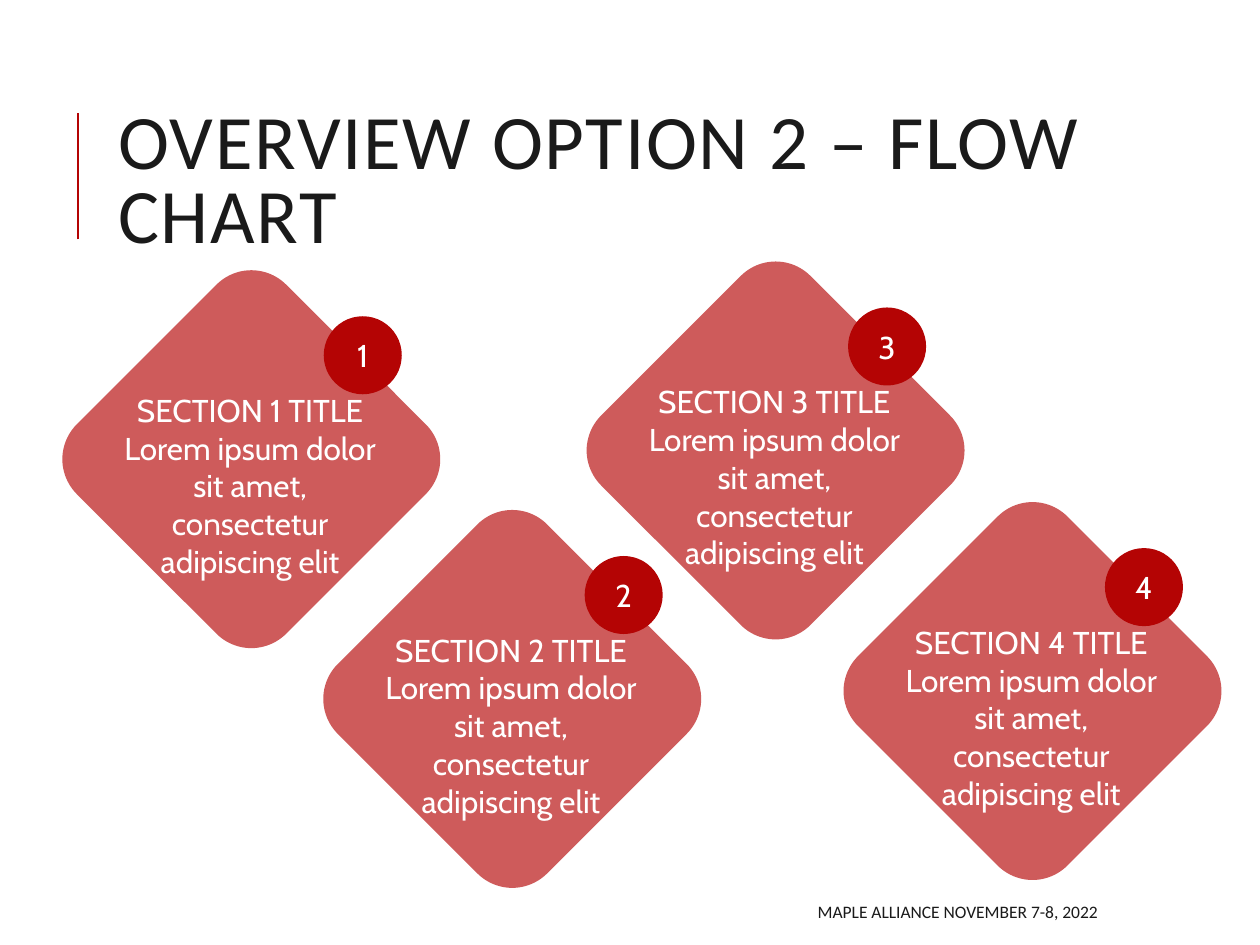
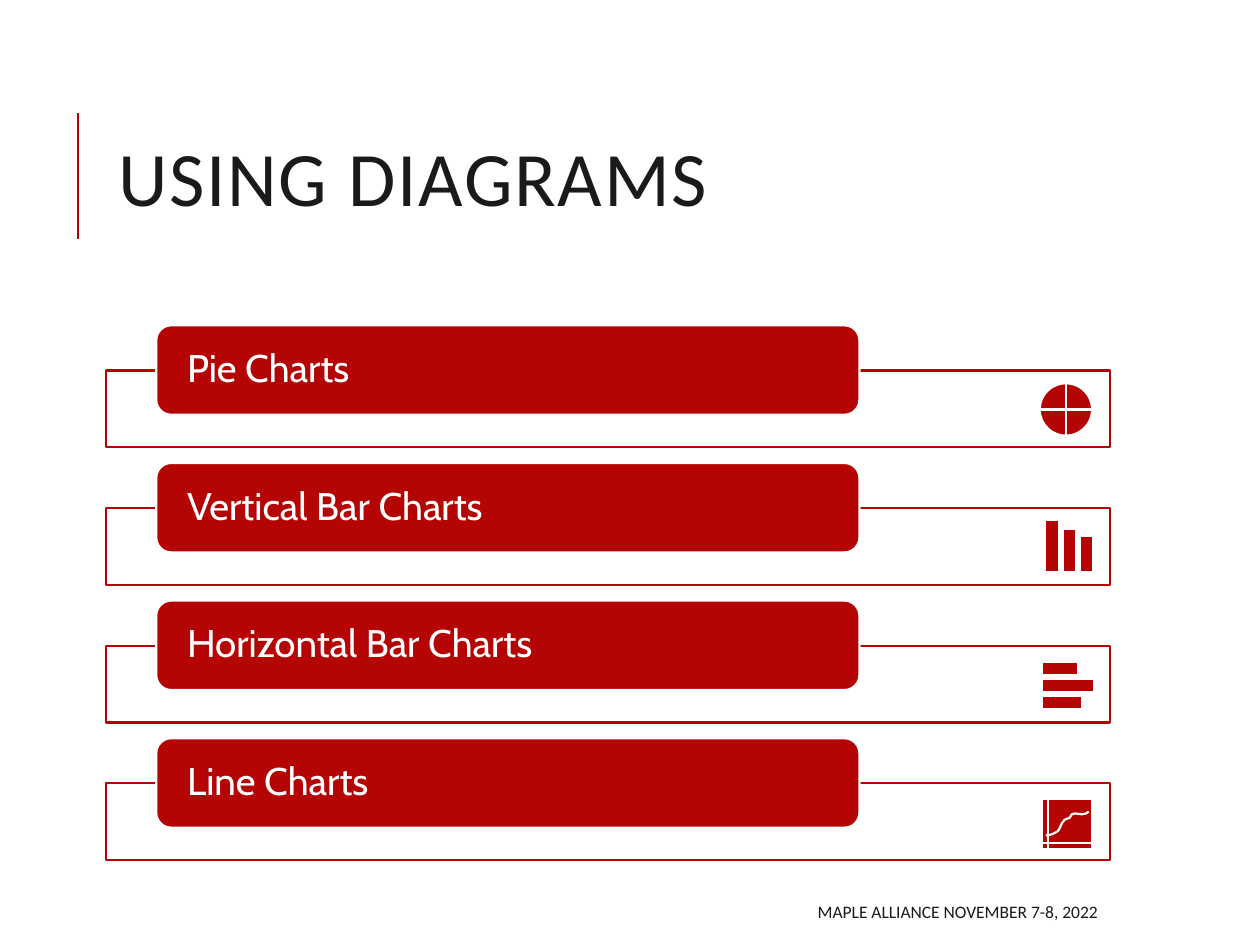
from lxml import etree
from pptx import Presentation
from pptx.dml.color import RGBColor
from pptx.enum.shapes import MSO_CONNECTOR, MSO_SHAPE
from pptx.enum.text import MSO_ANCHOR, MSO_AUTO_SIZE, PP_ALIGN
from pptx.oxml.ns import qn
from pptx.util import Pt

# Shared style
RED = RGBColor(0xB4, 0x04, 0x04)
WHITE = RGBColor(0xFF, 0xFF, 0xFF)
INK = RGBColor(0x1A, 0x1A, 0x1A)
HEAD_FONT, BODY_FONT = "Calibri", "Cabin"
LEFT, CENTER, RIGHT = PP_ALIGN.LEFT, PP_ALIGN.CENTER, PP_ALIGN.RIGHT
TOP, MIDDLE = MSO_ANCHOR.TOP, MSO_ANCHOR.MIDDLE
GROW = MSO_AUTO_SIZE.SHAPE_TO_FIT_TEXT
STRAIGHT = MSO_CONNECTOR.STRAIGHT
RECT, ROUNDED = MSO_SHAPE.RECTANGLE, MSO_SHAPE.ROUNDED_RECTANGLE
CIRCLE = MSO_SHAPE.OVAL
PIE_ICON = MSO_SHAPE.FLOWCHART_OR
AXES_ICON = MSO_SHAPE.FLOWCHART_INTERNAL_STORAGE
FOOTER = "MAPLE ALLIANCE NOVEMBER 7-8, 2022"

# Flow chart content
SECTION_TEXT = "Lorem ipsum dolor sit amet, consectetur adipiscing elit"
SECTION_PLACES = [(59, 177.8), (208.1, 314.8), (358.6, 172.8), (505.4, 310.3)]
DIAMOND_SIZE, BADGE_SIZE = 169.2, 44.6

# Chart list content
CHART_KINDS = ["Pie Charts", "Vertical Bar Charts",
               "Horizontal Bar Charts", "Line Charts"]
ROW_TOP, ROW_PITCH = 185.9, 78.65
BAR_THICKNESS = 7.9
CURVE_START = (597.6, 477.4)
CURVE_PIECES = [
    ((599.8, 477.4), (601.9, 476.6), (604.1, 475.2)),
    ((605.5, 474.5), (606.2, 470.9), (607.7, 469.4)),
    ((608.4, 468), (609.8, 468), (611.3, 467.3)),
    ((612, 466.6), (612, 465.1), (613.4, 465.1)),
    ((614.9, 464.4), (617.8, 465.8), (619.2, 465.1)),
    ((620.6, 465.1), (621.4, 464.4), (622.1, 463.7)),
]


def write(box, *lines, size=18, font=BODY_FONT, color=WHITE, align=LEFT,
          anchor=MIDDLE, line_spacing=None, tracking=None, insets=(7.2, 3.6)):
    """Fill a shape or text box with one paragraph for each line."""
    frame = box.text_frame
    frame.word_wrap = True
    frame.vertical_anchor = anchor
    frame.margin_left = frame.margin_right = Pt(insets[0])
    frame.margin_top = frame.margin_bottom = Pt(insets[1])
    for index, line in enumerate(lines):
        para = frame.add_paragraph() if index else frame.paragraphs[0]
        para.alignment = align
        if line_spacing:
            para.line_spacing = line_spacing
        span = para.add_run()
        span.text = line
        span.font.size = Pt(size)
        span.font.name = font
        span.font.color.rgb = color
        if tracking:
            span.font._element.set("spc", str(tracking * 100))


def add_text(page, place, *lines, **style):
    box = page.shapes.add_textbox(*map(Pt, place))
    write(box, *lines, **style)
    return box


def add_block(page, kind, place, fill=RED, line=None, width=1.25, opacity=None):
    """Add a flat preset shape; opacity is a percentage."""
    shape = page.shapes.add_shape(kind, *map(Pt, place))
    shape.shadow.inherit = False
    shape.fill.solid()
    shape.fill.fore_color.rgb = fill
    if opacity:
        color = shape._element.spPr.find(qn("a:solidFill"))[0]
        etree.SubElement(color, qn("a:alpha"), val=str(opacity * 1000))
    if line is None:
        shape.line.fill.background()
    else:
        shape.line.color.rgb = line
        shape.line.width = Pt(width)
    return shape


def add_icon_part(page, kind, place):
    return add_block(page, kind, place, line=WHITE, width=1.5)


def add_page(deck, title):
    """Add a page with the red rule, title and footer."""
    page = deck.slides.add_slide(deck.slide_layouts[6])
    rule = page.shapes.add_connector(
        STRAIGHT, Pt(44.6), Pt(136.8), Pt(44.6), Pt(64.8))
    rule.line.color.rgb = RED
    rule.line.width = Pt(1.5)
    etree.SubElement(rule._element.spPr, qn("a:effectLst"))
    add_text(page, (60.5, 46.1, 573.8, 118.1), title, size=44,
             font=HEAD_FONT, color=INK, line_spacing=0.8, tracking=1)
    add_text(page, (285.8, 509.8, 348.5, 21.6), FOOTER, size=10,
             font=HEAD_FONT, color=INK, align=RIGHT)
    return page


def add_section(page, number, left, top):
    """Add a diamond with its numbered badge and text."""
    diamond = add_block(page, ROUNDED, (left, top, DIAMOND_SIZE, DIAMOND_SIZE),
                        opacity=65)
    diamond.rotation = 45
    badge = add_block(page, CIRCLE,
                      (left + 126, top + 2.9, BADGE_SIZE, BADGE_SIZE))
    write(badge, str(number), align=CENTER)
    box = add_text(page, (left + 2.9, top + 42, 162, 94.3),
                   f"SECTION {number} TITLE", SECTION_TEXT,
                   align=CENTER, anchor=TOP)
    box.text_frame.auto_size = GROW


def add_chart_row(page, label, top):
    add_block(page, RECT, (60.5, top + 25.8, 573.8, 43.9), fill=WHITE,
              line=RED, opacity=90)
    bar = add_block(page, ROUNDED, (89.3, top, 401.8, 51.1), line=WHITE)
    write(bar, label, size=22, line_spacing=0.9, insets=(15.1, 0))


def bezier_points(start, pieces, steps=8):
    """Return points along joined cubic curves."""
    points = []
    for first, second, end in pieces:
        for step in range(1, steps + 1):
            t = step / steps
            u = 1 - t
            points.append(tuple(
                u**3 * a + 3 * u * u * t * b + 3 * u * t * t * c + t**3 * d
                for a, b, c, d in zip(start, first, second, end)))
        start = end
    return points


def add_curve(page):
    builder = page.shapes.build_freeform(*map(Pt, CURVE_START))
    builder.add_line_segments(
        [(Pt(x), Pt(y)) for x, y in bezier_points(CURVE_START, CURVE_PIECES)],
        close=False)
    curve = builder.convert_to_shape()
    curve.shadow.inherit = False
    curve.fill.background()
    curve.line.color.rgb = WHITE
    curve.line.width = Pt(1.25)


def add_icons(page):
    # Pie
    add_icon_part(page, PIE_ICON, (594, 218.9, 30.2, 30.2))
    # Vertical bars, standing on one baseline
    for index, length in enumerate([30.2, 25.2, 20.9]):
        add_icon_part(page, RECT, (597.2 + 9.9 * index, 327.2 - length,
                                   BAR_THICKNESS, length))
    # Horizontal bars
    for index, length in enumerate([20.9, 30.2, 23]):
        add_icon_part(page, RECT, (595.4, 378 + 9.7 * index,
                                   length, BAR_THICKNESS))
    # Line chart
    axes = add_icon_part(page, AXES_ICON, (595.4, 456.5, 28.8, 28.8))
    axes.rotation = 270
    add_curve(page)


def main():
    deck = Presentation()
    deck.slide_width, deck.slide_height = Pt(720), Pt(540)

    # Flow chart
    page = add_page(deck, "OVERVIEW OPTION 2 – FLOW CHART")
    for number, (left, top) in enumerate(SECTION_PLACES, start=1):
        add_section(page, number, left, top)

    # Chart list
    page = add_page(deck, "USING DIAGRAMS")
    for index, label in enumerate(CHART_KINDS):
        add_chart_row(page, label, ROW_TOP + ROW_PITCH * index)
    add_icons(page)

    deck.save("out.pptx")


if __name__ == "__main__":
    main()
